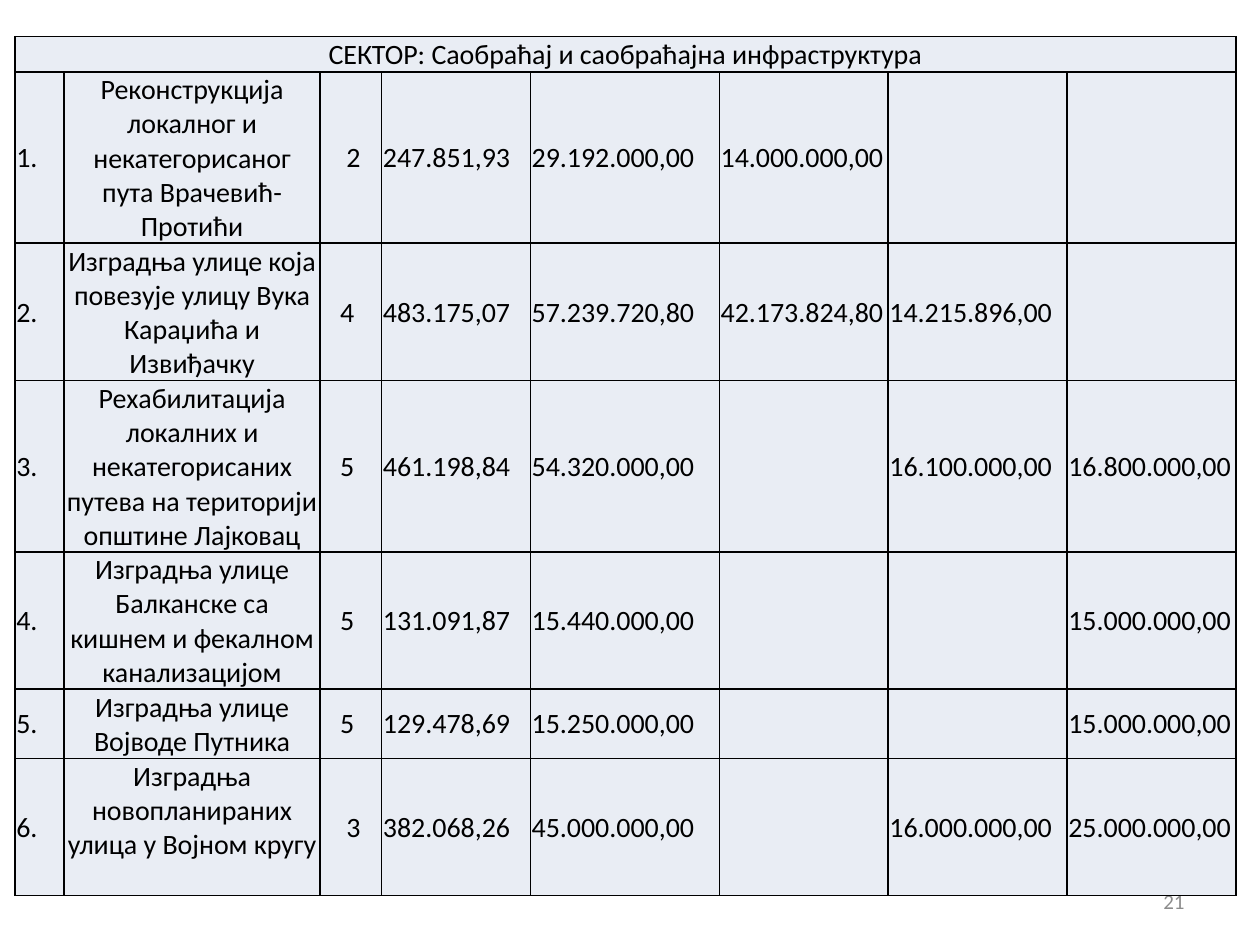
from dataclasses import dataclass

from lxml import etree
from pptx import Presentation
from pptx.dml.color import RGBColor
from pptx.enum.text import MSO_ANCHOR, PP_ALIGN
from pptx.oxml.ns import qn
from pptx.table import Table, _Cell
from pptx.text.text import TextFrame
from pptx.util import Inches, Pt

BLACK = RGBColor(0x00, 0x00, 0x00)
GREY = RGBColor(0x8C, 0x8C, 0x8C)
PALE = RGBColor(0xE9, 0xED, 0xF4)
TOP, MIDDLE = MSO_ANCHOR.TOP, MSO_ANCHOR.MIDDLE
CENTER, RIGHT, JUSTIFY = PP_ALIGN.CENTER, PP_ALIGN.RIGHT, PP_ALIGN.JUSTIFY

FONT = "Calibri"
WIDE, HIGH = 10, 7.5
LEFT, UPPER = 0.12, 0.29
COLS = (0.39, 2.03, 0.49, 1.18, 1.5, 1.34, 1.42, 1.34)
LINE, PAD = 0.27, 0.01
SPACE = 0.05
NAME_COL, MARK_COL = 1, 2
TITLE = "СЕКТОР: Саобраћај и саобраћајна инфраструктура"


@dataclass
class Project:
    name: str
    mark: str
    sums: tuple[str, ...]
    lines: int
    indent: int = 3
    anchor: MSO_ANCHOR = MIDDLE


PROJECTS = (
    Project("Реконструкција локалног и некатегорисаног пута Врачевић-Протићи", "2",
            ("247.851,93", "29.192.000,00", "14.000.000,00", "", ""), 5, indent=4),
    Project("Изградња улице која повезује улицу Вука Караџића и Извиђачку", "4",
            ("483.175,07", "57.239.720,80", "42.173.824,80", "14.215.896,00", ""), 4),
    Project("Рехабилитација локалних и некатегорисаних путева на територији општине Лајковац",
            "5", ("461.198,84", "54.320.000,00", "", "16.100.000,00", "16.800.000,00"), 5),
    Project("Изградња улице Балканске са кишнем и фекалном канализацијом", "5",
            ("131.091,87", "15.440.000,00", "", "", "15.000.000,00"), 4),
    Project("Изградња улице Војводе Путника", "5",
            ("129.478,69", "15.250.000,00", "", "", "15.000.000,00"), 2),
    Project("Изградња новопланираних улица у Војном кругу", "3",
            ("382.068,26", "45.000.000,00", "", "16.000.000,00", "25.000.000,00"), 4,
            indent=4, anchor=TOP),
)


def write(frame: TextFrame, text: str, size: int, color: RGBColor, align: PP_ALIGN) -> None:
    frame.text = text
    para = frame.paragraphs[0]
    para.alignment = align
    for font in [para.font] + [run.font for run in para.runs]:
        font.name, font.size = FONT, Pt(size)
        font.color.rgb = color


def border(cell: _Cell) -> None:
    props = cell._tc.get_or_add_tcPr()
    for side in ("a:lnL", "a:lnR", "a:lnT", "a:lnB"):
        line = etree.SubElement(props, qn(side), w=str(Pt(1)))
        fill = etree.SubElement(line, qn("a:solidFill"))
        etree.SubElement(fill, qn("a:srgbClr"), val=str(BLACK))


def style(cell: _Cell) -> None:
    border(cell)
    cell.fill.solid()
    cell.fill.fore_color.rgb = PALE
    cell.vertical_anchor = MIDDLE
    cell.margin_left = cell.margin_right = cell.margin_top = Inches(PAD)
    cell.margin_bottom = 0


def fill_row(table: Table, row: int, item: Project) -> None:
    texts = (f"{row}.", item.name, item.mark, *item.sums)
    for col, text in enumerate(texts):
        align = CENTER if col == NAME_COL else JUSTIFY
        write(table.cell(row, col).text_frame, text, 16, BLACK, align)
    table.cell(row, NAME_COL).vertical_anchor = item.anchor
    mark = table.cell(row, MARK_COL).text_frame.paragraphs[0]
    mark._p.get_or_add_pPr().set("marL", str(Inches(item.indent * SPACE)))


def main() -> None:
    deck = Presentation()
    deck.slide_width, deck.slide_height = Inches(WIDE), Inches(HIGH)
    shapes = deck.slides.add_slide(deck.slide_layouts[6]).shapes

    page = shapes.add_textbox(Inches(7.17), Inches(6.95), Inches(2.33), Inches(0.4))
    page.text_frame.word_wrap = True
    page.text_frame.vertical_anchor = MIDDLE
    write(page.text_frame, "21", 12, GREY, RIGHT)

    highs = [LINE * count + PAD for count in (1, *(item.lines for item in PROJECTS))]
    table = shapes.add_table(len(highs), len(COLS), Inches(LEFT), Inches(UPPER),
                             Inches(sum(COLS)), Inches(sum(highs))).table
    table.first_row = table.horz_banding = False
    for col, wide in zip(table.columns, COLS):
        col.width = Inches(wide)
    for row, high in zip(table.rows, highs):
        row.height = Inches(high)
    for cell in table.iter_cells():
        style(cell)

    head = table.cell(0, 0)
    head.merge(table.cell(0, len(COLS) - 1))
    write(head.text_frame, TITLE, 16, BLACK, CENTER)
    for row, item in enumerate(PROJECTS, 1):
        fill_row(table, row, item)

    deck.save("out.pptx")


if __name__ == "__main__":
    main()
